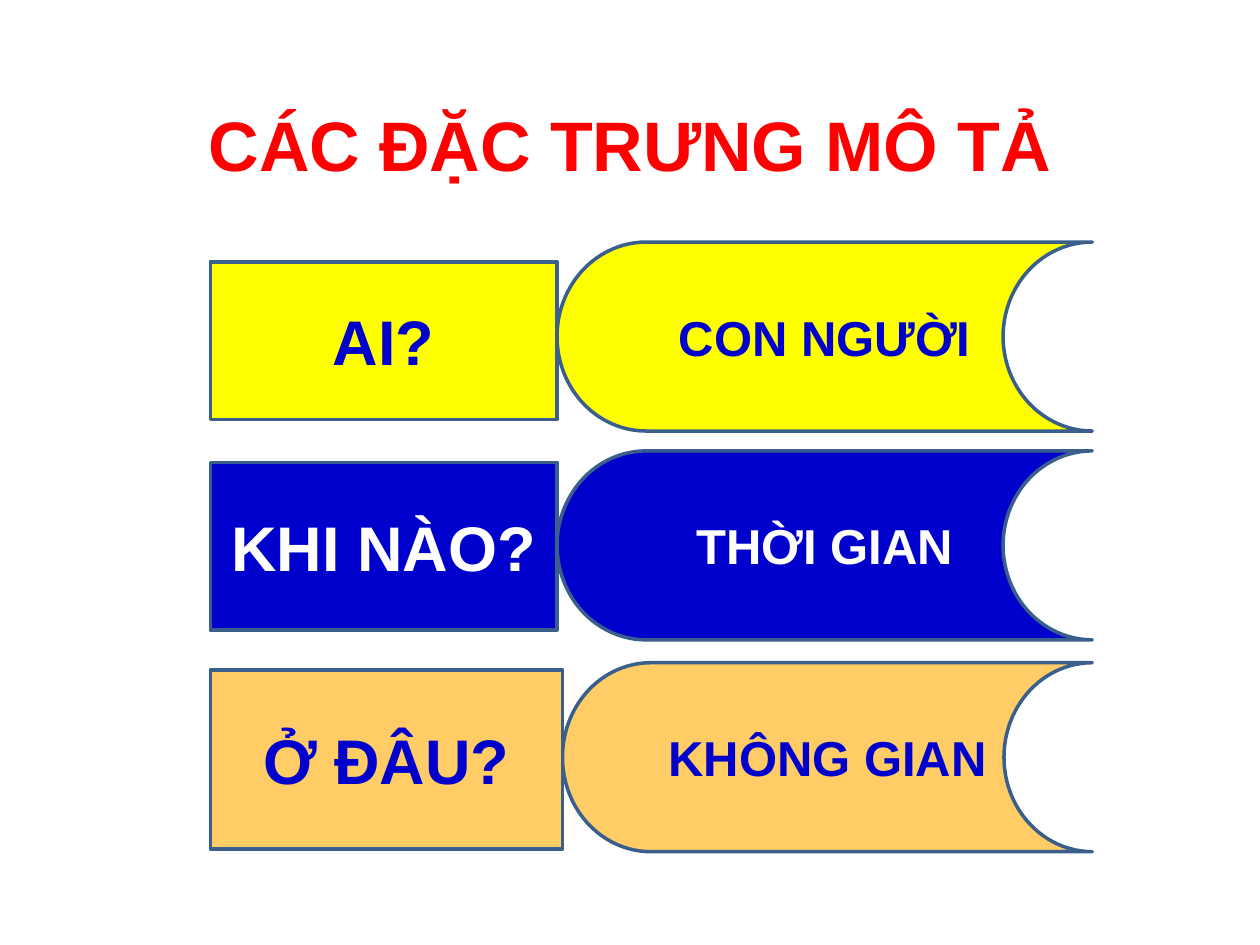
import pptx
import pptx.dml.color
import pptx.enum.shapes
import pptx.enum.text
import pptx.util

Cm = pptx.util.Cm
Pt = pptx.util.Pt
PRESET = pptx.enum.shapes.MSO_SHAPE

COLOURS = {
    "title": "FF0000",
    "yellow": "FFFF00",
    "blue": "0000CC",
    "orange": "FFCC66",
    "white": "FFFFFF",
    "outline": "3A5F8C",
}


def rgb(name):
    return pptx.dml.color.RGBColor.from_string(COLOURS[name])


def write_text(frame, text, *, size, colour, font="Arial", bold=True):
    """Fill a text frame with one line, centred both ways."""
    frame.word_wrap = True
    frame.vertical_anchor = pptx.enum.text.MSO_ANCHOR.MIDDLE
    paragraph = frame.paragraphs[0]
    paragraph.alignment = pptx.enum.text.PP_ALIGN.CENTER
    run = paragraph.add_run()
    run.text = text
    run.font.name = font
    run.font.size = Pt(size)
    run.font.bold = bold
    run.font.color.rgb = rgb(colour)


class SlideBuilder:
    title_size = 40
    question_size = 36
    answer_size = 28
    outline_width = 2

    def __init__(self, slide):
        self.slide = slide

    def title(self, text, left, top, width, height):
        heading = self.slide.shapes.add_textbox(Cm(left), Cm(top), Cm(width), Cm(height))
        write_text(heading.text_frame, text, size=self.title_size, colour="title")

    def block(self, preset, box, text, size, fill, colour):
        panel = self.slide.shapes.add_shape(preset, *map(Cm, box))
        panel.shadow.inherit = False
        panel.fill.solid()
        panel.fill.fore_color.rgb = rgb(fill)
        panel.line.color.rgb = rgb("outline")
        panel.line.width = Pt(self.outline_width)
        write_text(panel.text_frame, text, size=size, colour=colour)

    def question(self, text, box, fill, colour):
        self.block(PRESET.RECTANGLE, box, text, self.question_size, fill, colour)

    def answer(self, text, box, fill, colour):
        self.block(PRESET.FLOWCHART_STORED_DATA, box, text, self.answer_size, fill, colour)


LEFT, RIGHT = 4.24, 22.02
ANSWER_HEIGHT = 3.81

# question, its top and height, answer, its top, where the two meet, fill, text colour
FEATURES = [
    ("AI?", 5.28, 3.18, "CON NGƯỜI", 4.88, 11.23, "yellow", "blue"),
    ("KHI NÀO?", 9.32, 3.38, "THỜI GIAN", 9.09, 11.23, "blue", "white"),
    ("Ở ĐÂU?", 13.51, 3.61, "KHÔNG GIAN", 13.36, 11.34, "orange", "blue"),
]


def main():
    deck = pptx.Presentation()
    deck.slide_width, deck.slide_height = Cm(25.4), Cm(19.05)
    builder = SlideBuilder(deck.slides.add_slide(deck.slide_layouts[6]))

    builder.title("CÁC ĐẶC TRƯNG MÔ TẢ", 1.27, 1.96, 22.86, 1.85)
    for question, top, height, answer, answer_top, seam, fill, colour in FEATURES:
        builder.answer(answer, (seam, answer_top, RIGHT - seam, ANSWER_HEIGHT), fill, colour)
        builder.question(question, (LEFT, top, seam - LEFT, height), fill, colour)

    deck.save("out.pptx")


if __name__ == "__main__":
    main()
